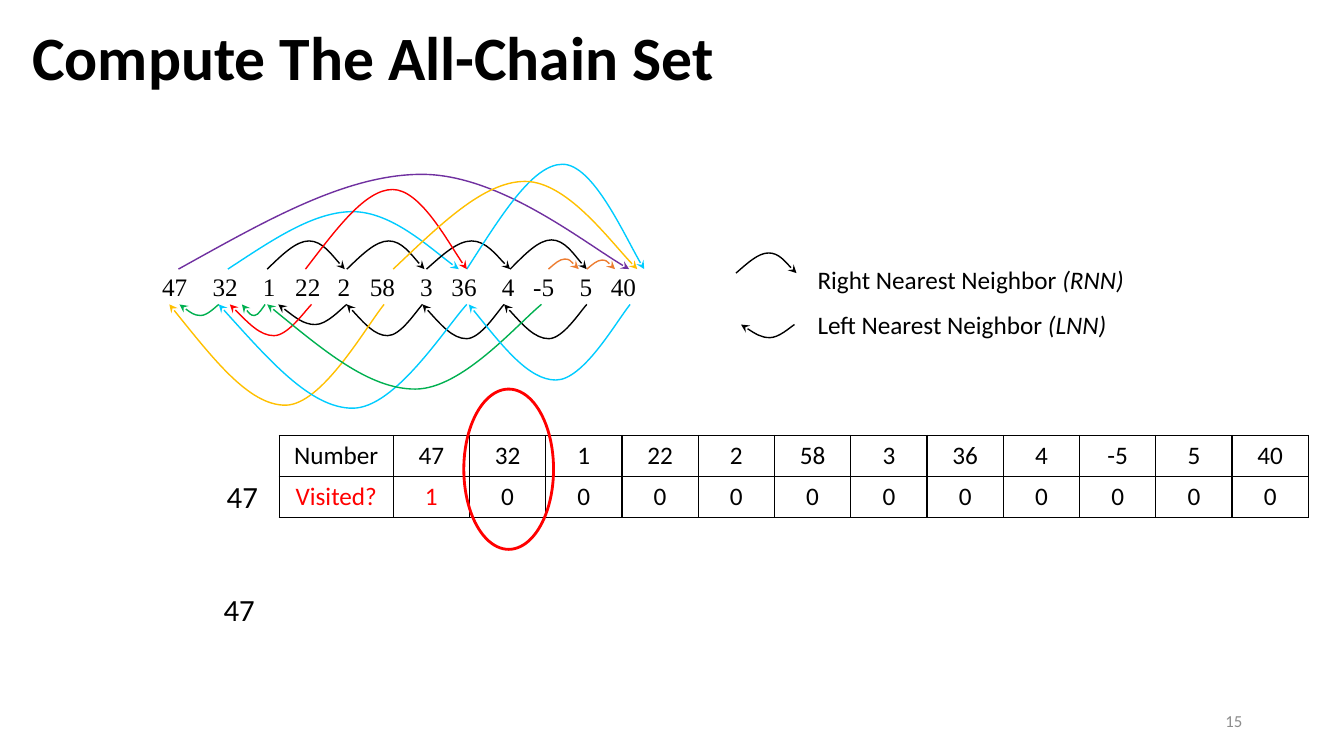
from lxml import etree
from pptx import Presentation
from pptx.dml.color import RGBColor
from pptx.enum import shapes, text
from pptx.oxml import ns
from pptx.util import Inches, Pt

COLORS = {"black": "000000", "white": "FFFFFF", "gray": "8C8C8C", "red": "FF0000",
          "purple": "7030A0", "cyan": "00CCFF", "orange": "ED7D31",
          "green": "00B050", "gold": "FFC000"}
NUMBERS = ["47", "32", "1", "22", "2", "58", "3", "36", "4", "-5", "5", "40"]
NUMBER_STOPS = [0.5, 1, 1.32, 1.74, 2.06, 2.56, 2.87, 3.37, 3.68, 4.14, 4.45]

# Arcs as (left end, right end, height, color), from the left of the chain
RIGHT_NEIGHBORS = [
    (0.26, 4.73, 0.94, "purple"), (0.75, 3.04, 0.57, "cyan"),
    (1.14, 1.91, 0.28, "black"), (1.93, 2.7, 0.28, "black"),
    (2.72, 3.55, 0.28, "black"), (3.55, 4.31, 0.29, "black"),
    (3.12, 4.88, 1.04, "cyan"), (3.93, 4.23, 0.1, "orange"),
    (1.52, 3.12, 0.79, "red"), (4.31, 4.59, 0.09, "orange"),
    (2.39, 4.81, 0.87, "gold")]
LEFT_NEIGHBORS = [
    (1.25, 1.93, 0.2, "black"), (1.93, 2.68, 0.31, "black"),
    (2.68, 3.49, 0.34, "black"), (3.49, 4.31, 0.34, "black"),
    (0.27, 0.66, 0.11, "green"), (0.89, 1.12, 0.11, "green"),
    (0.77, 1.58, 0.31, "red"), (0.17, 2.3, 1, "gold"),
    (0.66, 3.12, 1.03, "cyan"), (1.14, 3.86, 0.84, "green"),
    (3.14, 4.74, 0.75, "cyan")]
# Shape of every arc: share of its width and of its height
ARC_POINTS = [(0, 0), (0.19, 0.5), (0.37, 1), (0.54, 1), (0.71, 1), (0.91, 0.24), (1, 0)]


def rgb(name):
    return RGBColor.from_string(COLORS[name])


def set_font(font, size, color="black", name="Calibri"):
    font.size, font.name = Pt(size), name
    font.color.rgb = rgb(color)


def add_text(collection, box, content, size, color="black", name="Calibri"):
    shape = collection.add_textbox(*map(Inches, box))
    shape.text_frame.word_wrap = True
    paragraph = shape.text_frame.paragraphs[0]
    paragraph.text = content
    set_font(paragraph.font, size, color, name)
    return shape


def add_arc(collection, left, right, base, height, color):
    """Curve above the base with its arrow at right, or below it with its arrow at left."""
    points = [(Inches(left + x * (right - left)), Inches(base - y * height))
              for x, y in ARC_POINTS]
    builder = collection.build_freeform(*points[0])
    builder.add_line_segments(points[1:], close=False)
    shape = builder.convert_to_shape()
    shape.shadow.inherit = False
    shape.fill.background()
    shape.line.color.rgb = rgb(color)
    shape.line.width = Pt(1)
    # Turn each three straight segments into one Bezier curve
    path = shape.element.find(".//" + ns.qn("a:path"))
    segments = path.findall(ns.qn("a:lnTo"))
    for first in range(0, len(segments), 3):
        curve = etree.SubElement(path, ns.qn("a:cubicBezTo"))
        for segment in segments[first:first + 3]:
            curve.append(segment[0])
            path.remove(segment)
    arrow = "a:tailEnd" if height > 0 else "a:headEnd"
    etree.SubElement(shape.line._get_or_add_ln(), ns.qn(arrow), type="stealth")


def add_title(slide, box):
    title = slide.shapes.title
    title.left, title.top, title.width, title.height = map(Inches, box)
    frame = title.text_frame
    frame.text = "Compute The All-Chain Set"
    frame.auto_size = text.MSO_AUTO_SIZE.NONE
    frame.vertical_anchor = text.MSO_ANCHOR.MIDDLE
    paragraph = frame.paragraphs[0]
    paragraph.alignment = text.PP_ALIGN.LEFT
    paragraph.line_spacing = 0.9
    set_font(paragraph.font, 44)
    paragraph.font.bold = True


def add_chain(slide, box):
    left, top = box[:2]
    group = slide.shapes.add_group_shape()
    row = add_text(group.shapes, box, "\t".join(NUMBERS), 18, name="Times New Roman")
    properties = row.text_frame.paragraphs[0]._p.get_or_add_pPr()
    tabs = etree.Element(ns.qn("a:tabLst"))
    properties.insert(0, tabs)
    for stop in NUMBER_STOPS:
        etree.SubElement(tabs, ns.qn("a:tab"), pos=str(Inches(stop)), algn="l")
    for base, sign, arcs in ((0.03, 1, RIGHT_NEIGHBORS), (0.38, -1, LEFT_NEIGHBORS)):
        for start, end, height, color in arcs:
            add_arc(group.shapes, left + start, left + end, top + base, sign * height, color)


def add_legend(slide, box):
    left, top, width, height = box
    rows = [("Right", "(RNN)", 0.07, (0, 0.6, 0.21, 0.2)),
            ("Left", "(LNN)", 0.52, (0.05, 0.58, 0.72, -0.13))]
    for side, short, offset, (start, end, base, rise) in rows:
        add_arc(slide.shapes, left + start, left + end, top + base, rise, "black")
        label = add_text(slide.shapes, (left + 0.71, top + offset, width - 0.71, 0.4),
                         f"{side} Nearest Neighbor ", 18)
        run = label.text_frame.paragraphs[0].add_run()
        run.text = short
        run.font.italic = True


def add_borders(cell):
    properties = cell._tc.get_or_add_tcPr()
    for index, side in enumerate(("lnL", "lnR", "lnT", "lnB")):
        line = etree.Element(ns.qn(f"a:{side}"), w=str(Pt(1)))
        fill = etree.SubElement(line, ns.qn("a:solidFill"))
        etree.SubElement(fill, ns.qn("a:srgbClr"), val=COLORS["black"])
        properties.insert(index, line)


def add_visited_table(slide, box):
    rows = [["Number"] + NUMBERS, ["Visited?", "1"] + ["0"] * (len(NUMBERS) - 1)]
    table = slide.shapes.add_table(2, len(rows[0]), *map(Inches, box)).table
    table.first_row = table.horz_banding = False
    label_width = 1.13
    for index, column in enumerate(table.columns):
        column.width = Inches((box[2] - label_width) / len(NUMBERS) if index else label_width)
    for row, values in enumerate(rows):
        for column, value in enumerate(values):
            cell = table.cell(row, column)
            cell.text = value
            cell.fill.solid()
            cell.fill.fore_color.rgb = rgb("white")
            paragraph = cell.text_frame.paragraphs[0]
            paragraph.alignment = text.PP_ALIGN.CENTER
            set_font(paragraph.font, 18, "red" if row == 1 and column < 2 else "black")
            add_borders(cell)


def add_current_mark(slide, box):
    ellipse = slide.shapes.add_shape(shapes.MSO_SHAPE.OVAL, *map(Inches, box))
    ellipse.shadow.inherit = False
    ellipse.fill.background()
    ellipse.line.color.rgb = rgb("red")
    ellipse.line.width = Pt(2)


def add_slide_number(slide, box):
    number = add_text(slide.shapes, box, "15", 12, "gray")
    number.text_frame.vertical_anchor = text.MSO_ANCHOR.MIDDLE
    number.text_frame.paragraphs[0].alignment = text.PP_ALIGN.RIGHT


def main():
    presentation = Presentation()
    presentation.slide_width, presentation.slide_height = Inches(13.33), Inches(7.5)
    slide = presentation.slides.add_slide(presentation.slide_layouts[5])
    add_visited_table(slide, (2.77, 4.32, 10.21, 0.81))
    add_title(slide, (0.22, 0.21, 11.5, 0.78))
    add_chain(slide, (1.51, 2.64, 5.07, 0.4))
    add_legend(slide, (7.3, 2.5, 4.13, 0.92))
    for left, top in ((2.15, 4.69), (2.12, 5.81)):
        add_text(slide.shapes, (left, top, 0.55, 0.47), "47", 22)
    add_slide_number(slide, (9.42, 6.95, 3, 0.4))
    add_current_mark(slide, (4.6, 3.86, 0.89, 1.59))
    presentation.save("out.pptx")


if __name__ == "__main__":
    main()
